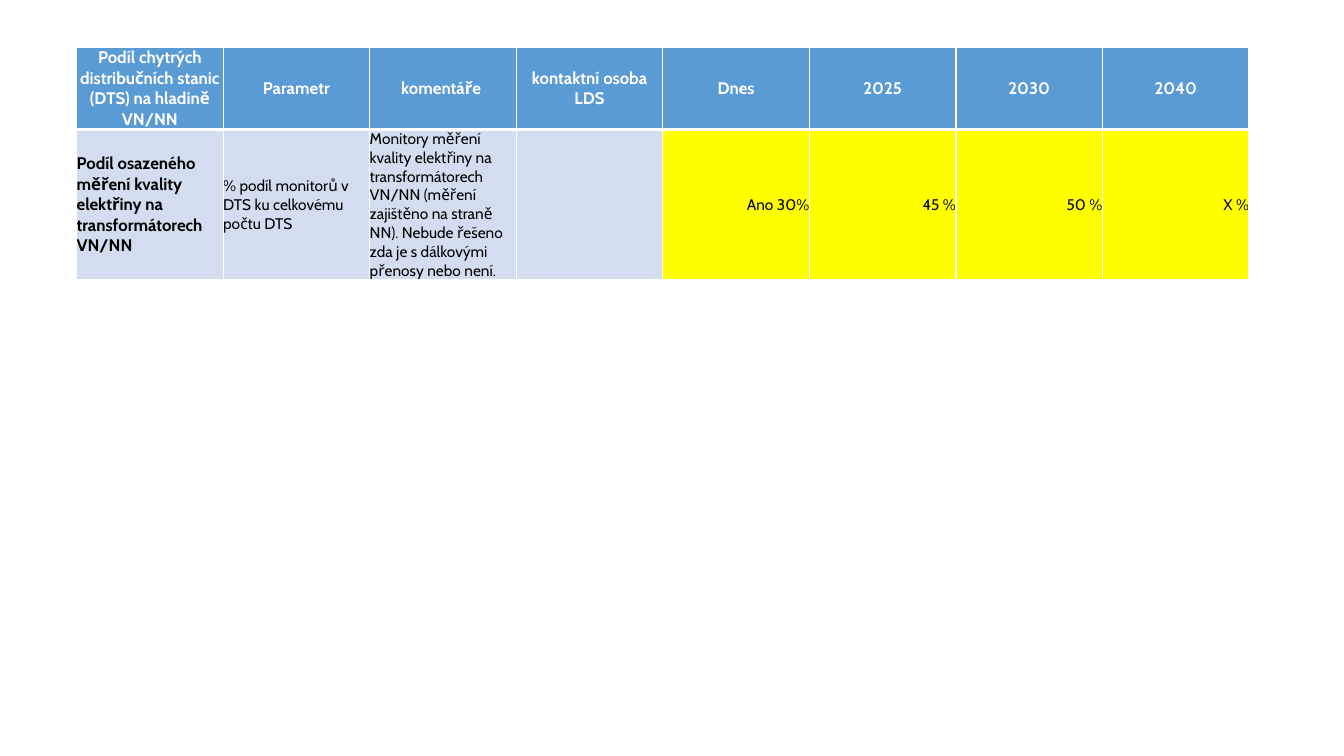
"""Build a slide with a table of smart distribution station targets."""
from lxml.etree import SubElement
from pptx import Presentation
from pptx.dml.color import RGBColor
from pptx.enum.text import MSO_ANCHOR as Anchor, PP_ALIGN as Align
from pptx.oxml.ns import qn
from pptx.util import Inches, Pt

WHITE = RGBColor(0xFF, 0xFF, 0xFF)
BLACK = RGBColor(0x00, 0x00, 0x00)
BLUE = RGBColor(0x5B, 0x9B, 0xD5)
PALE_BLUE = RGBColor(0xD2, 0xDE, 0xEF)
YELLOW = RGBColor(0xFF, 0xFF, 0x00)

HEADER = [
    "Podíl chytrých distribučních stanic (DTS) na hladině VN/NN",
    "Parametr", "komentáře ", "kontaktní osoba LDS",
    "Dnes", "2025", "2030", "2040",
]
MEASURES = [
    "Podíl osazeného měření kvality elektřiny na transformátorech VN/NN",
    "% podíl monitorů v DTS ku celkovému počtu DTS",
    "Monitory měření kvality elektřiny na transformátorech VN/NN (měření "
    "zajištěno na straně NN). Nebude řešeno zda je s dálkovými přenosy nebo není.",
    "", "Ano 30%", "45 %", "50 %", "X %",
]
FIRST_TARGET = HEADER.index("Dnes")
ROW_HEIGHTS = [0.8, 1.47]
COLUMN_WIDTH = 11.63 / len(HEADER)
CELL_FORMAT = {
    "margin_left": 0, "margin_right": 0, "margin_top": 0, "margin_bottom": 0,
    "vertical_anchor": Anchor.MIDDLE,
}


def add_border(cell, side, width):
    """Draw one white side of a cell."""
    properties = cell._tc.get_or_add_tcPr()
    line = SubElement(properties, qn(f"a:ln{side}"), w=str(Pt(width)))
    fill = SubElement(line, qn("a:solidFill"))
    SubElement(fill, qn("a:srgbClr"), val=str(WHITE))


presentation = Presentation()
presentation.slide_width = Inches(13.33)
presentation.slide_height = Inches(7.5)
slide = presentation.slides.add_slide(presentation.slide_layouts[6])

table = slide.shapes.add_table(
    2, len(HEADER), Inches(0.76), Inches(0.47),
    Inches(COLUMN_WIDTH * len(HEADER)), Inches(sum(ROW_HEIGHTS)),
).table
table.first_row = True
table.horz_banding = False
for column in table.columns:
    column.width = Inches(COLUMN_WIDTH)

for row_index, texts in enumerate([HEADER, MEASURES]):
    table.rows[row_index].height = Inches(ROW_HEIGHTS[row_index])
    is_header = row_index == 0
    for column_index, text in enumerate(texts):
        is_target = column_index >= FIRST_TARGET
        if is_header:
            fill_color, alignment = BLUE, Align.CENTER
        elif is_target:
            fill_color, alignment = YELLOW, Align.RIGHT
        else:
            fill_color, alignment = PALE_BLUE, Align.LEFT
        is_title = is_header or column_index == 0

        cell = table.cell(row_index, column_index)
        for name, value in CELL_FORMAT.items():
            setattr(cell, name, value)
        for side in "LRTB":
            heavy = side == ("B" if is_header else "T")
            add_border(cell, side, 3 if heavy else 1)
        cell.fill.solid()
        cell.fill.fore_color.rgb = fill_color

        paragraph = cell.text_frame.paragraphs[0]
        paragraph.alignment = alignment
        if text:
            run = paragraph.add_run()
            run.text = text
            font_format = {"name": "Cabin", "size": Pt(12 if is_title else 11), "bold": is_title}
            for name, value in font_format.items():
                setattr(run.font, name, value)
            run.font.color.rgb = WHITE if is_header else BLACK

presentation.save("out.pptx")
